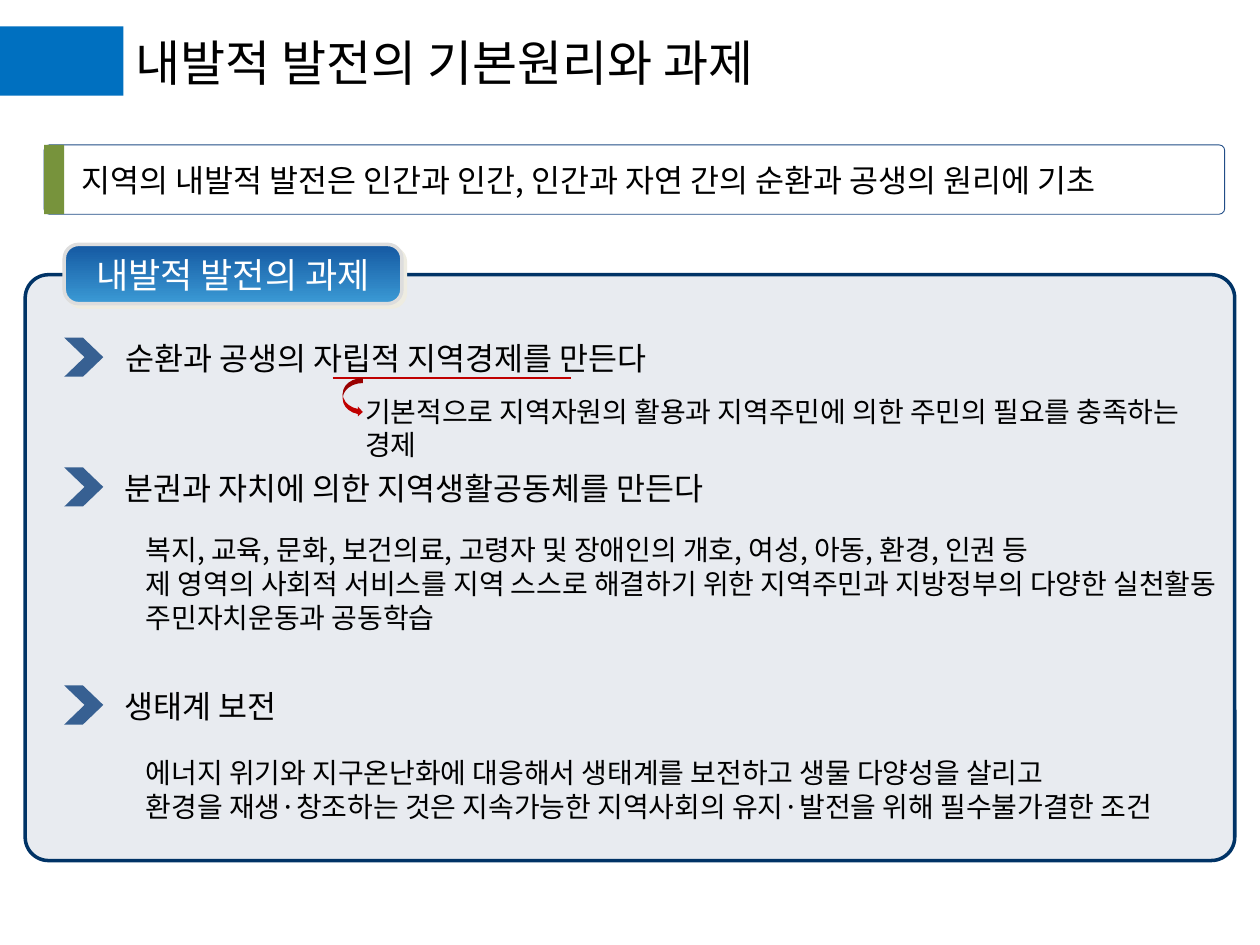
from dataclasses import dataclass

from lxml.etree import SubElement
from pptx import Presentation
from pptx.dml.color import RGBColor
from pptx.enum.shapes import MSO_CONNECTOR, MSO_SHAPE
from pptx.enum.text import MSO_ANCHOR, MSO_AUTO_SIZE, PP_ALIGN
from pptx.oxml.ns import qn
from pptx.util import Inches, Pt

FONT = "Noto Sans CJK KR"
COLUMNS, ROWS = 100, 75  # square grid cells of a tenth of an inch
BLACK, WHITE, RED = "000000", "FFFFFF", "C00000"
CHEVRON_COLUMN, DETAIL_COLUMN = 5.1, 10.6


@dataclass(frozen=True)
class Area:
    column: float
    row: float
    width: float
    height: float


@dataclass(frozen=True)
class Task:
    row: float
    column: float
    heading: str
    detail: Area
    lines: tuple[str, ...]


TASKS = (
    Task(26.8, 9, "순환과 공생의 자립적 지역경제를 만든다", Area(28, 30.8, 70.9, 3.7),
         ("기본적으로 지역자원의 활용과 지역주민에 의한 주민의 필요를 충족하는 경제",)),
    Task(37.1, 8.9, "분권과 자치에 의한 지역생활공동체를 만든다",
         Area(DETAIL_COLUMN, 41.8, 87.4, 9.1),
         ("복지, 교육, 문화, 보건의료, 고령자 및 장애인의 개호, 여성, 아동, 환경, 인권 등",
          "제 영역의 사회적 서비스를 지역 스스로 해결하기 위한 지역주민과 지방정부의 다양한 실천활동",
          "주민자치운동과 공동학습")),
    Task(54.4, 8.9, "생태계 보전", Area(DETAIL_COLUMN, 59.5, 87.4, 6.4),
         ("에너지 위기와 지구온난화에 대응해서 생태계를 보전하고 생물 다양성을 살리고",
          "환경을 재생·창조하는 것은 지속가능한 지역사회의 유지·발전을 위해 필수불가결한 조건")),
)


def cells(count: float) -> int:
    return Inches(count / 10)


def color(value: str) -> RGBColor:
    return RGBColor.from_string(value)


def place(area: Area) -> tuple[int, ...]:
    return tuple(cells(n) for n in (area.column, area.row, area.width, area.height))


def add_span(para, text: str, size: float, ink: str) -> None:
    span = para.add_run()
    span.text = text
    span.font.size = Pt(size)
    span.font.name = FONT
    span.font.color.rgb = color(ink)
    SubElement(span.font._element, qn("a:ea"), typeface=FONT)


def add_text(page, area: Area, lines: tuple[str, ...], size: float) -> None:
    box = page.shapes.add_textbox(*place(area))
    frame = box.text_frame
    frame.word_wrap = True
    frame.auto_size = MSO_AUTO_SIZE.SHAPE_TO_FIT_TEXT
    for index, line in enumerate(lines):
        para = frame.add_paragraph() if index else frame.paragraphs[0]
        add_span(para, line, size, BLACK)


def add_box(page, kind, area: Area, fill: str, line: str = "",
            weight: float = 0, corner: float | None = None):
    box = page.shapes.add_shape(kind, *place(area))
    box.shadow.inherit = False
    box.fill.solid()
    box.fill.fore_color.rgb = color(fill)
    if line:
        box.line.color.rgb = color(line)
        box.line.width = Pt(weight)
    else:
        box.line.fill.background()
    if corner is not None:
        box.adjustments[0] = corner
    return box


def label_box(box, text: str, size: float, ink: str, align):
    frame = box.text_frame
    frame.word_wrap = False
    frame.vertical_anchor = MSO_ANCHOR.MIDDLE
    para = frame.paragraphs[0]
    para.alignment = align
    add_span(para, text, size, ink)
    return para


def add_title(page) -> None:
    add_box(page, MSO_SHAPE.RECTANGLE, Area(0, 2.1, 9.8, 5.5), "0070C0")
    add_text(page, Area(9.8, 2.1, 59.1, 5.7), ("내발적 발전의 기본원리와 과제",), 28)


def add_principle(page) -> None:
    bar = add_box(page, MSO_SHAPE.ROUNDED_RECTANGLE, Area(3.5, 11.5, 93.7, 5.5),
                  WHITE, "214D87", 0.5, 0.08)
    para = label_box(bar, "지역의 내발적 발전은 인간과 인간, 인간과 자연 간의 순환과 공생의 원리에 기초",
                     18, BLACK, PP_ALIGN.LEFT)
    properties = para._p.get_or_add_pPr()
    properties.set("marL", "0")
    properties.set("indent", str(cells(1.9)))
    before = SubElement(properties, qn("a:spcBef"))
    SubElement(before, qn("a:spcPct"), val="20000")
    add_box(page, MSO_SHAPE.RECTANGLE, Area(3.5, 11.5, 1.6, 5.5), "77933C")


def add_panel(page) -> None:
    panel = add_box(page, MSO_SHAPE.ROUNDED_RECTANGLE, Area(2, 21.8, 96, 46.5),
                    "D3D9E3", "003366", 2, 0.04)
    tint = panel._element.spPr.find(qn("a:solidFill")).find(qn("a:srgbClr"))
    SubElement(tint, qn("a:alpha"), val="50000")

    # Heading tab with a vertical gradient and a hard shadow
    tab = add_box(page, MSO_SHAPE.ROUNDED_RECTANGLE, Area(5.1, 19.4, 26.8, 4.7),
                  WHITE, "DDDDDD", 2, 0.24)
    tab.fill.gradient()
    tab.fill.gradient_angle = 270
    for stop, value in zip(tab.fill.gradient_stops, ("1458A1", "3B9AD5")):
        stop.color.rgb = color(value)
    effects = tab._element.spPr.find(qn("a:effectLst"))
    shadow = SubElement(effects, qn("a:outerShdw"), blurRad="0", dist=str(Pt(2.8)),
                        dir=str(45 * 60000), algn="ctr", rotWithShape="0")
    SubElement(shadow, qn("a:srgbClr"), val="EEECE1")
    label_box(tab, "내발적 발전의 과제", 20, WHITE, PP_ALIGN.CENTER)


def add_task(page, task: Task) -> None:
    add_box(page, MSO_SHAPE.CHEVRON, Area(CHEVRON_COLUMN, task.row, 3.1, 3.1),
            "376092", corner=0.52)
    add_text(page, Area(task.column, task.row - 0.35, 79.5, 4), (task.heading,), 18)
    add_text(page, task.detail, task.lines, 16)


def add_emphasis(page) -> None:
    row = 30
    rule = page.shapes.add_connector(MSO_CONNECTOR.STRAIGHT, cells(26.4), cells(row),
                                     cells(45.3), cells(row))
    rule.line.color.rgb = color(RED)
    rule.line.width = Pt(1.5)
    SubElement(rule._element.spPr, qn("a:effectLst"))
    add_box(page, MSO_SHAPE.CURVED_RIGHT_ARROW, Area(27.2, row, 1.6, 3.1), RED)


def main() -> None:
    deck = Presentation()
    deck.slide_width, deck.slide_height = cells(COLUMNS), cells(ROWS)
    page = deck.slides.add_slide(deck.slide_layouts[6])
    add_title(page)
    add_principle(page)
    add_panel(page)
    for task in TASKS:
        add_task(page, task)
    # Underline and arrow that lead to the first detail
    add_emphasis(page)
    deck.save("out.pptx")


if __name__ == "__main__":
    main()
